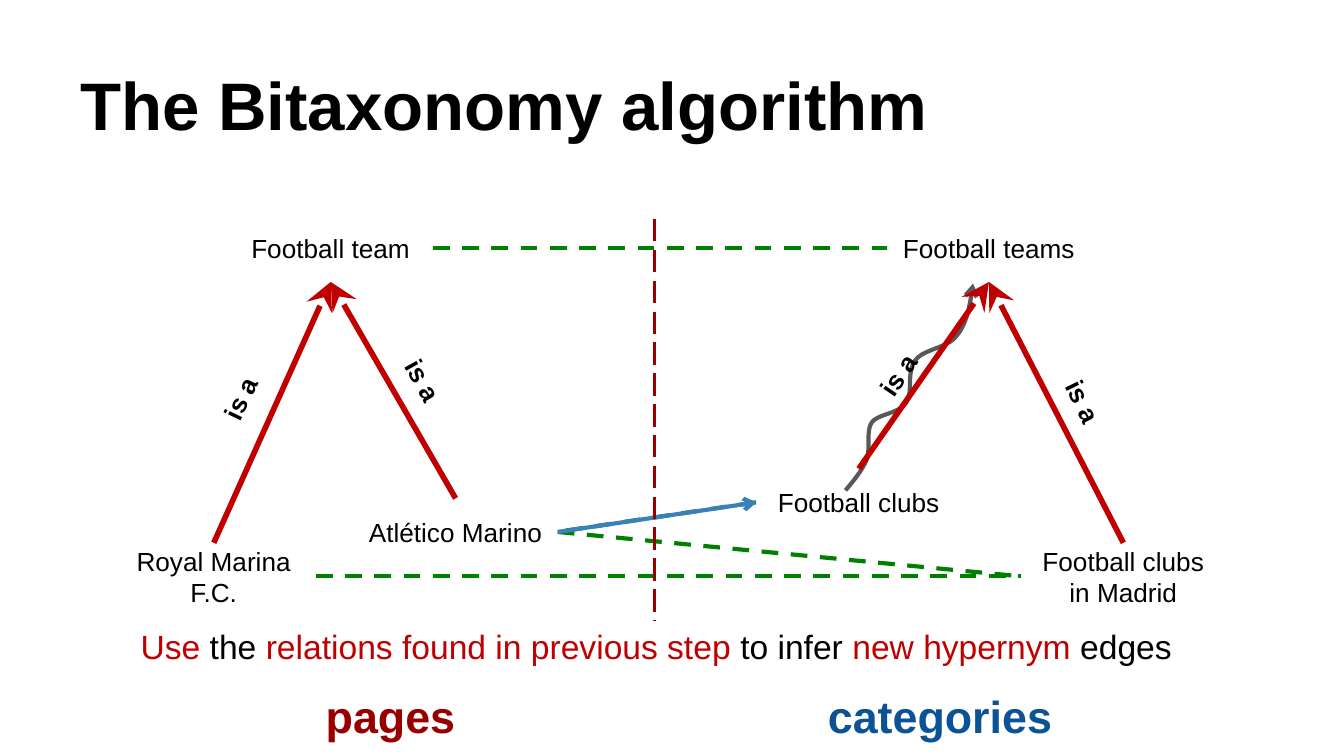
from dataclasses import dataclass

from pptx import Presentation
from pptx.dml.color import RGBColor
from pptx.enum import dml, shapes, text
from pptx.oxml import ns, xmlchemy
from pptx.util import Cm, Pt


@dataclass(frozen=True)
class Theme:
    font: str = "Arial"
    black: str = "000000"
    red: str = "C00000"
    green: str = "008000"
    blue: str = "3A81BA"
    gray: str = "595959"
    pages: str = "980000"
    categories: str = "0B5394"
    title: int = 36
    heading: int = 24
    caption: int = 18
    label: int = 14


T = Theme()
TOP, LEFT, BOTTOM, RIGHT = range(4)
NODE_W, NODE_H = 3.86, 1.27
NODES = {
    "club_page": ("Royal Marina\vF.C.", 2.11, 10.26),
    "team_page": ("Football team", 4.32, 4.06),
    "rival_page": ("Atlético Marino", 6.68, 9.42),
    "teams": ("Football teams", 16.76, 4.06),
    "clubs": ("Football clubs", 14.3, 8.86),
    "city_clubs": ("Football clubs\nin Madrid", 19.3, 10.26),
}
CROSS_LINKS = [
    ("team_page", "teams"),
    ("club_page", "city_clubs"),
    ("rival_page", "city_clubs"),
]
IS_A = [
    ("club_page", "team_page", 3.76, 6.93, 295.7),
    ("rival_page", "team_page", 7.34, 6.76, 60.9),
    ("clubs", "teams", 16.21, 6.48, 304.3),
    ("city_clubs", "teams", 19.81, 7.16, 64),
]
WAVE_START = (18.39, 5.36)
WAVE = [
    ((18.34, 5.72), (18.29, 6.1), (18.08, 6.35)),
    ((17.91, 6.58), (17.45, 6.6), (17.3, 6.81)),
    ((17.12, 7.04), (17.27, 7.44), (17.12, 7.62)),
    ((16.99, 7.82), (16.61, 7.82), (16.48, 7.98)),
    ((16.36, 8.15), (16.46, 8.48), (16.38, 8.69)),
    ((16.28, 8.92), (16.13, 9.09), (15.98, 9.27)),
]
CAPTION = [
    ("Use", T.red),
    (" the ", T.black),
    ("relations found in previous step", T.red),
    (" to infer ", T.black),
    ("new hypernym ", T.red),
    ("edges", T.black),
]


def style_run(r, size, color=T.black, bold=False):
    r.font.name = T.font
    r.font.size = Pt(size)
    r.font.bold = bold
    r.font.color.rgb = RGBColor.from_string(color)


def fill_text(tf, content, size, color=T.black, bold=False,
              align=text.PP_ALIGN.CENTER, anchor=text.MSO_ANCHOR.MIDDLE):
    tf.text = content
    tf.word_wrap = True
    tf.auto_size = text.MSO_AUTO_SIZE.NONE
    tf.vertical_anchor = anchor
    tf.margin_left = tf.margin_right = tf.margin_top = tf.margin_bottom = Cm(0.25)
    for p in tf.paragraphs:
        p.alignment = align
        for r in p.runs:
            style_run(r, size, color, bold)


def add_text(s, content, box, size, **style):
    sp = s.shapes.add_textbox(*map(Cm, box))
    fill_text(sp.text_frame, content, size, **style)
    return sp


def style_line(sp, color, width, dash=None):
    sp.line.color.rgb = RGBColor.from_string(color)
    sp.line.width = Pt(width)
    if dash:
        sp.line.dash_style = dash


def add_arrowhead(sp, end, kind, size="med"):
    ln = sp.element.spPr.find(ns.qn("a:ln"))
    head = xmlchemy.OxmlElement(f"a:{end}")
    for key, value in (("type", kind), ("w", size), ("len", size)):
        head.set(key, value)
    ln.append(head)


def add_line(s, start, end, color, width, dash=None):
    c = s.shapes.add_connector(shapes.MSO_CONNECTOR.STRAIGHT, *map(Cm, start + end))
    style_line(c, color, width, dash)
    c.element.spPr.append(xmlchemy.OxmlElement("a:effectLst"))
    return c


def add_link(s, source, source_site, target, target_site, color, width, dash=None):
    c = add_line(s, (0, 0), (0, 0), color, width, dash)
    c.begin_connect(source, source_site)
    c.end_connect(target, target_site)
    return c


def bezier_points(start, curves, steps=10):
    for a, b, end in curves:
        for i in range(1, steps + 1):
            t = i / steps
            q = 1 - t
            yield tuple(
                Cm(q**3 * p0 + 3 * q * q * t * p1 + 3 * q * t * t * p2 + t**3 * p3)
                for p0, p1, p2, p3 in zip(start, a, b, end)
            )
        start = end


def add_wave(s):
    builder = s.shapes.build_freeform(*map(Cm, WAVE_START))
    builder.add_line_segments(bezier_points(WAVE_START, WAVE), close=False)
    sp = builder.convert_to_shape()
    sp.shadow.inherit = False
    sp.fill.background()
    style_line(sp, T.gray, 2.25)
    add_arrowhead(sp, "headEnd", "arrow")


def add_title(s):
    sp = s.shapes.title
    sp.left, sp.top, sp.width, sp.height = map(Cm, (1.27, 0.58, 22.86, 2.39))
    fill_text(sp.text_frame, "The Bitaxonomy algorithm", T.title, bold=True,
              align=text.PP_ALIGN.LEFT, anchor=text.MSO_ANCHOR.BOTTOM)


def add_caption(s):
    tf = s.shapes.add_textbox(*map(Cm, (2.41, 11.71, 20.35, 1.02))).text_frame
    tf.word_wrap = False
    tf.auto_size = text.MSO_AUTO_SIZE.SHAPE_TO_FIT_TEXT
    for content, color in CAPTION:
        r = tf.paragraphs[0].add_run()
        r.text = content
        style_run(r, T.caption, color)


def add_graph(s):
    dash = dml.MSO_LINE.DASH
    add_line(s, (10.69, 10.03), (14.45, 9.47), T.green, 2.25, dash)
    add_wave(s)
    nodes = {
        name: add_text(s, label, (x, y, NODE_W, NODE_H), T.label)
        for name, (label, x, y) in NODES.items()
    }
    for page, category in CROSS_LINKS:
        add_link(s, nodes[page], RIGHT, nodes[category], LEFT, T.green, 2.25, dash)
    inferred = add_link(s, nodes["rival_page"], RIGHT, nodes["clubs"], LEFT, T.blue, 2.25)
    add_arrowhead(inferred, "tailEnd", "arrow")
    for child, parent, x, y, angle in IS_A:
        edge = add_link(s, nodes[child], TOP, nodes[parent], BOTTOM, T.red, 3)
        add_arrowhead(edge, "tailEnd", "stealth", "lg")
        label = add_text(s, "is a", (x, y, 1.52, 0.97), T.label, bold=True,
                         align=text.PP_ALIGN.LEFT, anchor=text.MSO_ANCHOR.TOP)
        label.rotation = angle


def main():
    prs = Presentation()
    prs.slide_width, prs.slide_height = Cm(25.4), Cm(14.29)
    s = prs.slides.add_slide(prs.slide_layouts[5])
    add_title(s)
    add_graph(s)
    add_caption(s)
    add_line(s, (12.37, 4.14), (12.37, 11.73), T.pages, 1.5, dml.MSO_LINE.LONG_DASH)
    add_text(s, "pages", (5.08, 12.88, 4.6, 1.3), T.heading, color=T.pages, bold=True)
    add_text(s, "categories", (15.29, 12.88, 4.95, 1.3), T.heading,
             color=T.categories, bold=True)
    prs.save("out.pptx")


if __name__ == "__main__":
    main()
